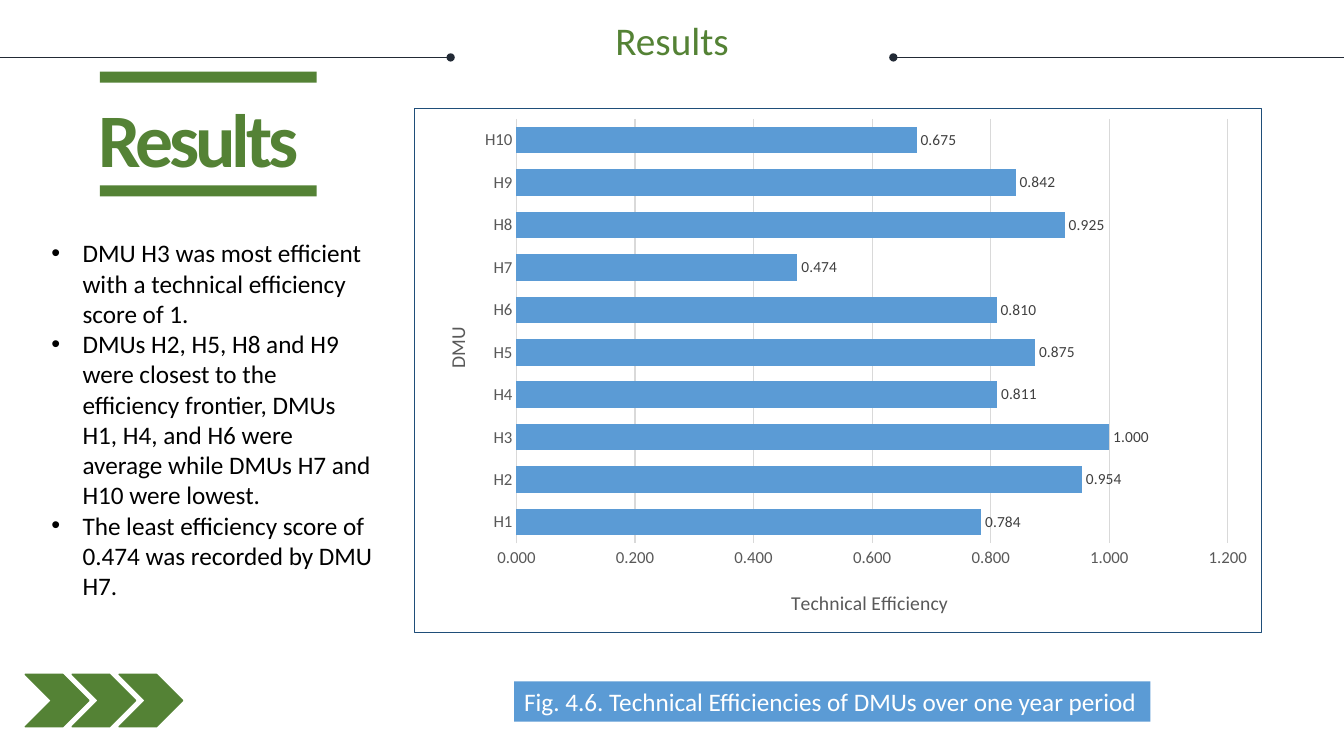
from lxml.etree import SubElement
from pptx import Presentation
from pptx.chart.data import CategoryChartData
from pptx.dml.color import RGBColor
from pptx.enum.chart import XL_CHART_TYPE, XL_LABEL_POSITION, XL_TICK_MARK
from pptx.enum.shapes import MSO_CONNECTOR, MSO_SHAPE
from pptx.enum.text import MSO_ANCHOR, PP_ALIGN
from pptx.oxml import parse_xml
from pptx.oxml.ns import nsdecls, qn
from pptx.util import Inches, Pt

THEME = {
    "font": "Calibri",
    "green": RGBColor.from_string("548235"),
    "blue": RGBColor.from_string("5B9BD5"),
    "rule": RGBColor.from_string("222A35"),
    "white": RGBColor.from_string("FFFFFF"),
    "black": RGBColor.from_string("000000"),
    "axis": RGBColor.from_string("595959"),
    "grid": RGBColor.from_string("D9D9D9"),
    "label": RGBColor.from_string("404040"),
    "border": "1F4E79",
    "heading": Pt(54), "title": Pt(28), "body": Pt(18),
    "axis_title": Pt(14), "tick": Pt(12), "value": Pt(11),
}

presentation = Presentation()
presentation.slide_width = Inches(13.33)
presentation.slide_height = Inches(7.5)
slide = presentation.slides.add_slide(presentation.slide_layouts[6])
shapes = slide.shapes


def area(left, top, width, height):
    """Turn percentages of the slide's width and height into lengths."""
    across = presentation.slide_width / 100
    down = presentation.slide_height / 100
    return [int(left * across), int(top * down), int(width * across), int(height * down)]


def style_font(font, size, color):
    font.name = THEME["font"]
    font.size = THEME[size]
    font.color.rgb = THEME[color]


# Chevrons
for step in range(3):
    chevron = shapes.add_shape(MSO_SHAPE.CHEVRON, *area(1.88 + 3.49 * step, 89.2, 4.73, 6.93))
    chevron.shadow.inherit = False
    chevron.fill.solid()
    chevron.fill.fore_color.rgb = THEME["green"]
    chevron.line.color.rgb = THEME["green"]
    chevron.line.width = Pt(1)

# Rules beside the title, with a dot at the inner end
for inner, outer in ((33.53, 0), (66.47, 100)):
    rule = shapes.add_connector(MSO_CONNECTOR.STRAIGHT, *area(inner, 7.6, outer, 7.6))
    rule.line.color.rgb = THEME["rule"]
    rule.line.width = Pt(0.5)
    properties = rule.element.spPr
    SubElement(properties.find(qn("a:ln")), qn("a:headEnd"), type="oval")
    SubElement(properties, qn("a:effectLst"))

# Title
title = shapes.add_textbox(*area(1.88, 2.8, 96.25, 11.33)).text_frame
title.word_wrap = True
title.margin_left = title.margin_right = title.margin_top = title.margin_bottom = 0
title.text = "Results"
paragraph = title.paragraphs[0]
paragraph.alignment = PP_ALIGN.CENTER
paragraph.line_spacing = 0.9
style_font(paragraph.runs[0].font, "title", "green")

# Heading, its two bars and the caption
panels = {}
for name, color, place in (
    ("heading", "white", (0, 12.4, 23.71, 14.4)),
    ("top bar", "green", (7.43, 9.47, 16.13, 1.47)),
    ("bottom bar", "green", (7.43, 24.53, 16.13, 1.47)),
    ("caption", "blue", (38.26, 90.13, 47.34, 5.33)),
):
    panel = shapes.add_shape(MSO_SHAPE.RECTANGLE, *area(*place))
    panel.shadow.inherit = False
    panel.fill.solid()
    panel.fill.fore_color.rgb = THEME[color]
    panel.line.fill.background()
    panels[name] = panel.text_frame

heading = panels["heading"]
heading.margin_left = heading.margin_right = Inches(0.2)
heading.margin_top = heading.margin_bottom = Inches(0.2)
heading.vertical_anchor = MSO_ANCHOR.MIDDLE
heading.text = "Results"
paragraph = heading.paragraphs[0]
paragraph.alignment = PP_ALIGN.RIGHT
paragraph.line_spacing = 0.7
run = paragraph.runs[0]
style_font(run.font, "heading", "green")
run.font.bold = True
run.font.element.set("spc", "-300") if hasattr(run.font, "element") else run._r.get_or_add_rPr().set("spc", "-300")

caption = panels["caption"]
caption.vertical_anchor = MSO_ANCHOR.TOP
caption.text = "Fig. 4.6. Technical Efficiencies of DMUs over one year period"
caption.paragraphs[0].alignment = PP_ALIGN.LEFT
style_font(caption.paragraphs[0].runs[0].font, "body", "white")

# Chart
efficiencies = (0.784, 0.954, 1, 0.811, 0.875, 0.81, 0.474, 0.925, 0.842, 0.675)
chart_data = CategoryChartData(number_format="0.000")
chart_data.categories = [f"H{number}" for number in range(1, len(efficiencies) + 1)]
chart_data.add_series("Series 1", efficiencies)
chart = shapes.add_chart(
    XL_CHART_TYPE.BAR_CLUSTERED, *area(30.83, 14.27, 63.09, 69.47), chart_data
).chart
chart.has_legend = False
chart.has_title = False
style_font(chart.font, "tick", "axis")

plot = chart.plots[0]
plot.gap_width = 60
plot.vary_by_categories = False
series_fill = plot.series[0].format.fill
series_fill.solid()
series_fill.fore_color.rgb = THEME["blue"]
labels = plot.series[0].data_labels
labels.show_value = True
labels.position = XL_LABEL_POSITION.OUTSIDE_END
labels.number_format = "0.000"
labels.number_format_is_linked = False
style_font(labels.font, "value", "label")

category_axis, value_axis = chart.category_axis, chart.value_axis
for axis, name in ((category_axis, "DMU"), (value_axis, "Technical Efficiency")):
    axis.major_tick_mark = axis.minor_tick_mark = XL_TICK_MARK.NONE
    style_font(axis.tick_labels.font, "tick", "axis")
    axis_title = axis.axis_title.text_frame
    axis_title.text = name
    font = axis_title.paragraphs[0].runs[0].font
    style_font(font, "axis_title", "axis")
    font.bold = False
category_axis.format.line.color.rgb = THEME["grid"]
category_axis.format.line.width = Pt(0.75)
category_axis.has_major_gridlines = False
value_axis.format.line.fill.background()
value_axis.minimum_scale, value_axis.maximum_scale, value_axis.major_unit = 0, 1.2, 0.2
value_axis.tick_labels.number_format = "0.000"
value_axis.tick_labels.number_format_is_linked = False
value_axis.major_gridlines.format.line.color.rgb = THEME["grid"]
value_axis.major_gridlines.format.line.width = Pt(0.75)

# Places of the plot and the axis titles, as shares of the chart
category_title = category_axis.axis_title.element
value_title = value_axis.axis_title.element
body = category_title.find(".//" + qn("a:bodyPr"))
body.set("rot", "-5400000")
body.set("vert", "horz")
plot_area = chart.element.find(".//" + qn("c:plotArea"))
for part, index, place in (
    (plot_area, 0, {"x": 0.12, "y": 0.02, "w": 0.84, "h": 0.81}),
    (category_title, 1, {"x": 0.03, "y": 0.41}),
    (value_title, 1, {"x": 0.44, "y": 0.91}),
):
    for old_layout in part.findall(qn("c:layout")):
        part.remove(old_layout)
    target = '<c:layoutTarget val="inner"/>' if "w" in place else ""
    modes = "".join(f'<c:{key}Mode val="edge"/>' for key in "xy")
    sizes = "".join(f'<c:{key} val="{share}"/>' for key, share in place.items())
    part.insert(index, parse_xml(
        f'<c:layout {nsdecls("c")}><c:manualLayout>{target}{modes}{sizes}'
        "</c:manualLayout></c:layout>"))
chart.element.find(qn("c:chart")).addnext(parse_xml(
    f'<c:spPr {nsdecls("c", "a")}><a:noFill/><a:ln w="{Pt(0.75)}"><a:solidFill>'
    f'<a:srgbClr val="{THEME["border"]}"/></a:solidFill></a:ln></c:spPr>'))

# Findings
findings = shapes.add_textbox(*area(3.08, 30.8, 25.43, 49.87)).text_frame
findings.word_wrap = True
findings.text = "\n".join((
    "DMU H3 was most efficient with a technical efficiency score of 1.",
    "DMUs H2, H5, H8 and H9 were closest to the efficiency frontier, "
    "DMUs H1, H4, and H6 were average while DMUs H7 and H10 were lowest.",
    "The least efficiency score of 0.474 was recorded by DMU H7.",
))
for paragraph in findings.paragraphs:
    style_font(paragraph.runs[0].font, "body", "black")
    properties = paragraph._p.get_or_add_pPr()
    properties.set("marL", str(Inches(0.31)))
    properties.set("indent", str(-Inches(0.31)))
    SubElement(properties, qn("a:buFont"), typeface="Arial")
    SubElement(properties, qn("a:buChar"), char="•")

presentation.save("out.pptx")
